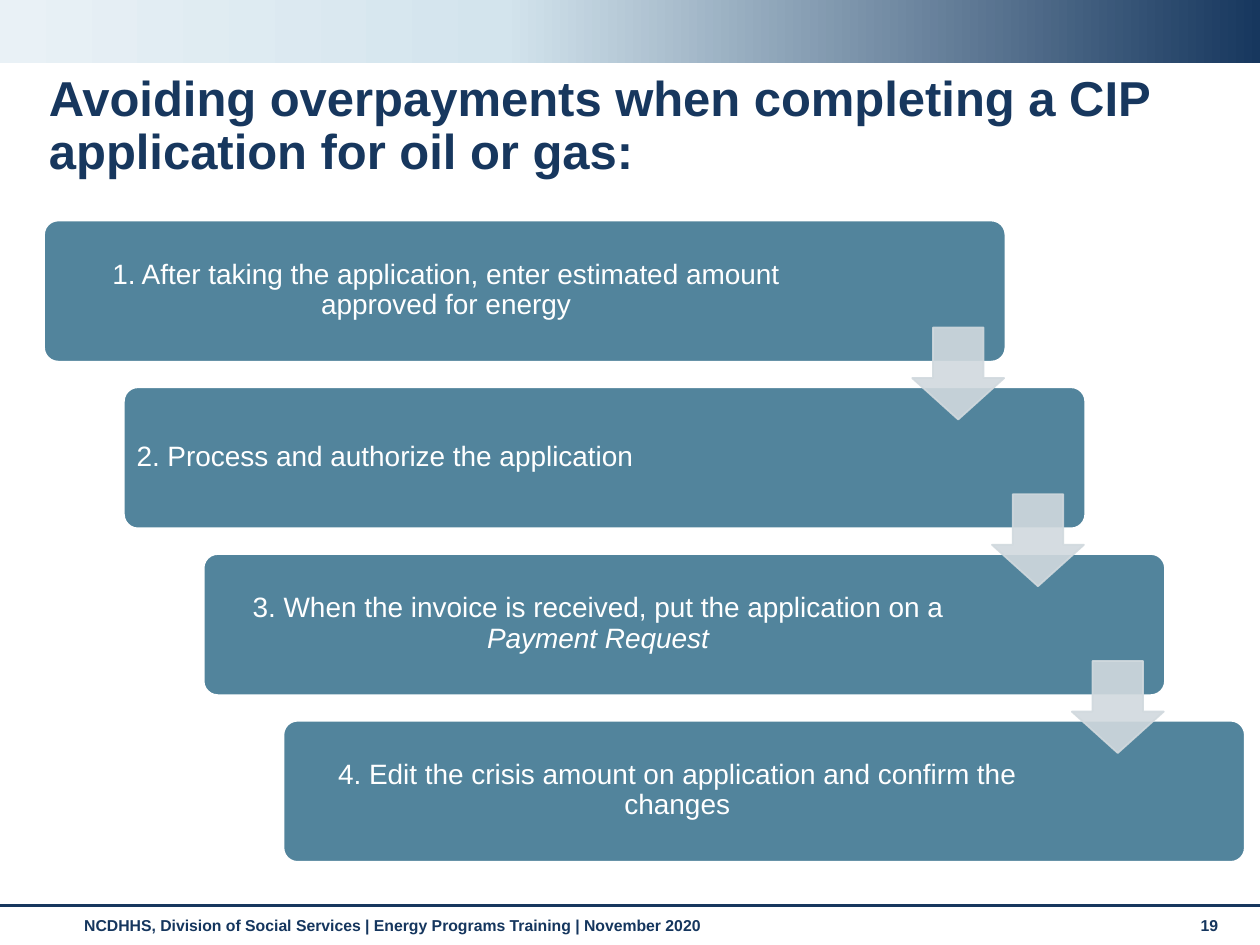
from copy import deepcopy

from lxml.etree import SubElement
from pptx import Presentation
from pptx.dml.color import RGBColor
from pptx.enum.shapes import MSO_CONNECTOR, MSO_SHAPE
from pptx.enum.text import MSO_ANCHOR, PP_ALIGN
from pptx.oxml.ns import qn
from pptx.util import Inches, Pt

NAVY, TEAL, GRAY, WHITE = "17375E", "52849C", "D1D9DE", "FFFFFF"
FOOTER_NAVY = "15365E"
TITLE = "Avoiding overpayments when completing a CIP application for oil or gas:"
FOOTER = "NCDHHS, Division of Social Services | Energy Programs Training | November 2020"
PAGE_NUMBER = "19"
STEPS = [
    ("1. After taking the application, enter estimated amount approved for energy", "", PP_ALIGN.CENTER, 6.32),
    ("2. Process and authorize the application", "", PP_ALIGN.LEFT, 6.19),
    ("3. When the invoice is received, put the application on a ", "Payment Request", PP_ALIGN.CENTER, 6.2),
    ("4. Edit the crisis amount on application and confirm the changes", "", PP_ALIGN.CENTER, 6.19),
]
BAND_STOPS = [(0, NAVY), (0.6, "D3E4ED"), (1, "E9F1F6")]

FIRST_LEFT, FIRST_TOP = 0.35, 1.75
STEP_RIGHT, STEP_DOWN = 1.9 / 3, 3.97 / 3
BOX_WIDTH, BOX_HEIGHT = 7.63, 1.12
TEXT_OFFSET, TEXT_HEIGHT = 0.03, 1.05
ARROW_SIZE = 0.73
ARROW_OFFSET_X, ARROW_OFFSET_Y = 6.89, 0.85


def color(value):
    return RGBColor.from_string(value)


def add_text(slide, box, text, italic_text="", size=16, fill=WHITE, bold=False,
             align=PP_ALIGN.LEFT, anchor=MSO_ANCHOR.TOP, insets=(0.1, 0.05), spacing=1.0):
    frame = slide.shapes.add_textbox(*map(Inches, box)).text_frame
    frame.word_wrap = True
    frame.vertical_anchor = anchor
    frame.margin_left = frame.margin_right = Inches(insets[0])
    frame.margin_top = frame.margin_bottom = Inches(insets[1])
    paragraph = frame.paragraphs[0]
    paragraph.alignment = align
    paragraph.line_spacing = spacing
    for content, italic in ((text, False), (italic_text, True)):
        if content:
            run = paragraph.add_run()
            run.text = content
            run.font.name = "Arial"
            run.font.size = Pt(size)
            run.font.bold = bold
            run.font.italic = italic
            run.font.color.rgb = color(fill)


def add_shape(slide, kind, box, fill, line, adjustments, opacity=100):
    shape = slide.shapes.add_shape(kind, *map(Inches, box))
    shape.shadow.inherit = False
    for index, value in enumerate(adjustments):
        shape.adjustments[index] = value
    shape.fill.solid()
    shape.fill.fore_color.rgb = color(fill)
    shape.line.color.rgb = color(line)
    shape.line.width = Pt(1)
    if opacity < 100:
        for element in shape.element.spPr.iter(qn("a:srgbClr")):
            SubElement(element, qn("a:alpha"), val=str(opacity * 1000))


def add_band(slide):
    band = slide.shapes.add_shape(MSO_SHAPE.RECTANGLE, 0, 0, Inches(10), Inches(0.5))
    band.shadow.inherit = False
    band.line.fill.background()
    band.fill.gradient()
    band.fill.gradient_angle = 180
    stop_list = band.element.spPr.find(".//" + qn("a:gsLst"))
    stop_list.append(deepcopy(stop_list[-1]))
    for stop, (position, value) in zip(band.fill.gradient_stops, BAND_STOPS):
        stop.position = position
        stop.color.rgb = color(value)


def add_footer(slide):
    rule = slide.shapes.add_connector(
        MSO_CONNECTOR.STRAIGHT, 0, Inches(7.19), Inches(10), Inches(7.19))
    rule.line.color.rgb = color(NAVY)
    rule.line.width = Pt(1.75)
    SubElement(rule.element.spPr, qn("a:effectLst"))
    add_text(slide, (0.57, 7.22, 8.74, 0.29), FOOTER, size=9, fill=FOOTER_NAVY, bold=True)
    add_text(slide, (9.43, 7.22, 0.44, 0.3), PAGE_NUMBER, size=9, fill=FOOTER_NAVY, bold=True)


def add_steps(slide):
    corners = [(FIRST_LEFT + index * STEP_RIGHT, FIRST_TOP + index * STEP_DOWN)
               for index in range(len(STEPS))]
    for (left, top), (text, italic_text, align, width) in zip(corners, STEPS):
        add_shape(slide, MSO_SHAPE.ROUNDED_RECTANGLE, (left, top, BOX_WIDTH, BOX_HEIGHT),
                  TEAL, WHITE, [0.1])
        add_text(slide, (left + TEXT_OFFSET, top + TEXT_OFFSET, width, TEXT_HEIGHT),
                 text, italic_text, align=align, anchor=MSO_ANCHOR.MIDDLE,
                 insets=(0.07, 0.07), spacing=0.9)
    for left, top in corners[:-1]:
        add_shape(slide, MSO_SHAPE.DOWN_ARROW,
                  (left + ARROW_OFFSET_X, top + ARROW_OFFSET_Y, ARROW_SIZE, ARROW_SIZE),
                  GRAY, GRAY, [0.55, 0.45], opacity=90)


def main():
    presentation = Presentation()
    presentation.slide_width, presentation.slide_height = Inches(10), Inches(7.5)
    slide = presentation.slides.add_slide(presentation.slide_layouts[6])
    add_band(slide)
    add_footer(slide)
    add_text(slide, (0.29, 0.54, 9.53, 0.6), TITLE, size=28, fill=NAVY, bold=True, spacing=0.9)
    add_steps(slide)
    presentation.save("out.pptx")


if __name__ == "__main__":
    main()
